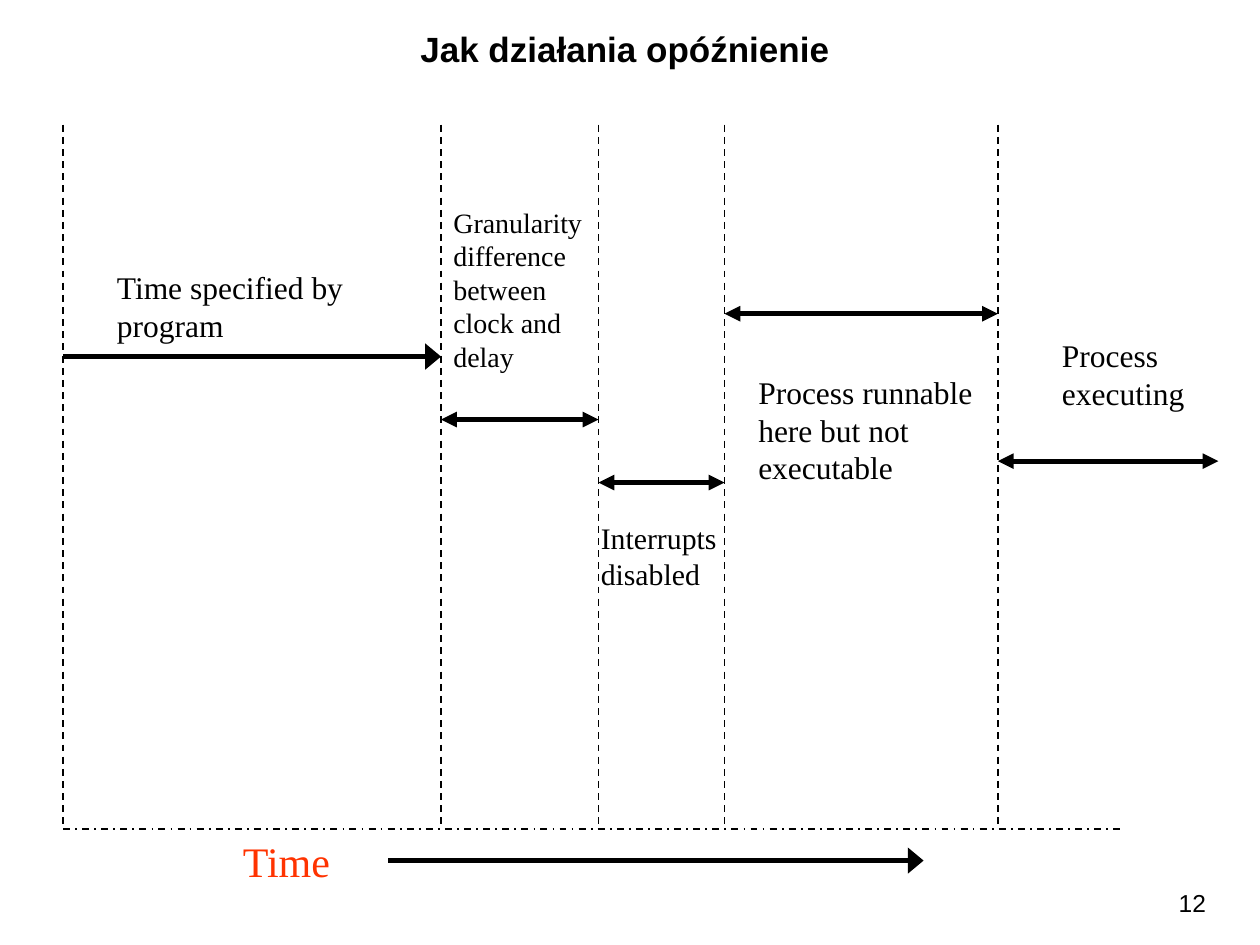
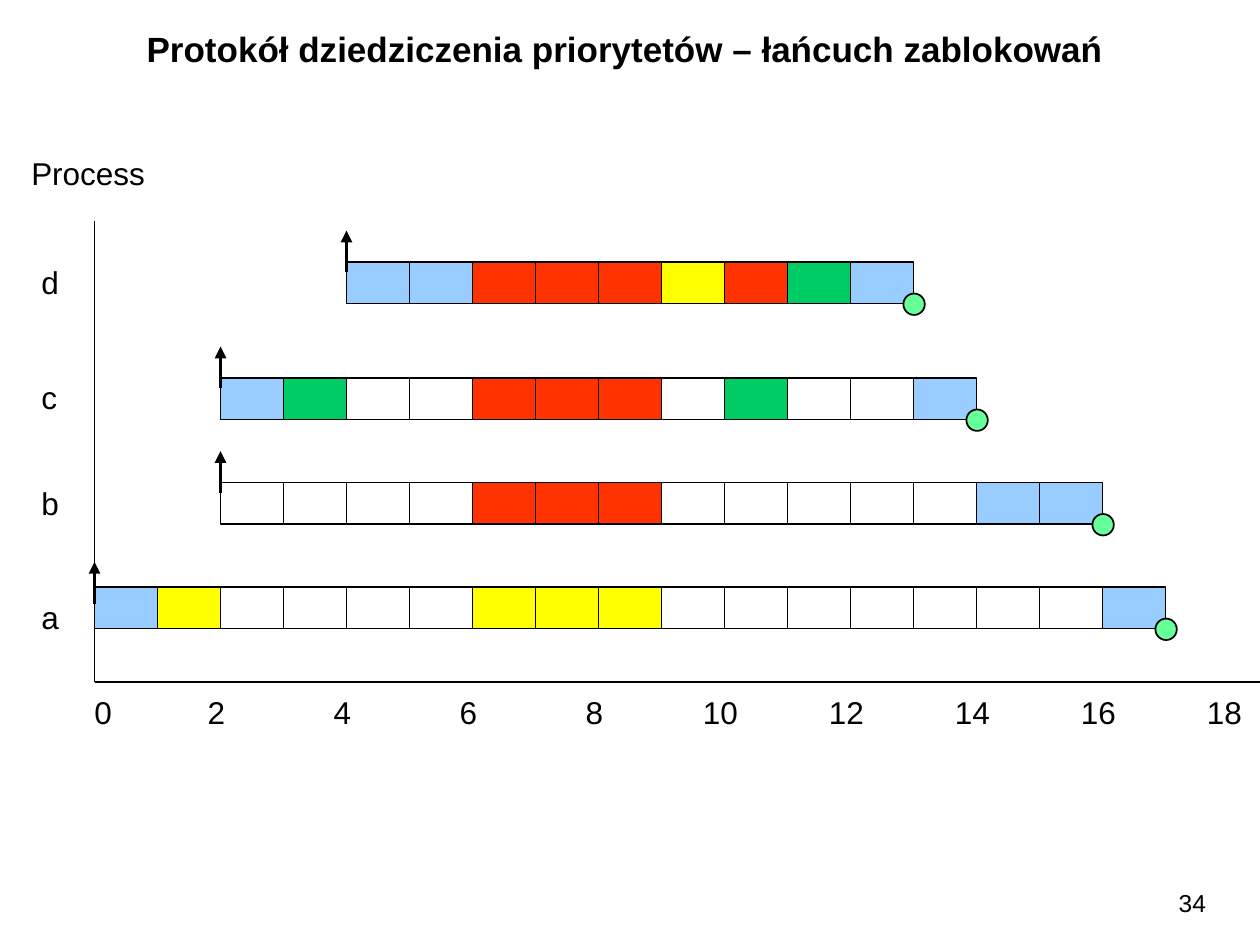
import dataclasses
import pptx
import pptx.dml.color
import pptx.enum.dml
import pptx.enum.shapes
import pptx.enum.text
import pptx.oxml
import pptx.oxml.ns
import pptx.util

PX = 9144
SHAPE = pptx.enum.shapes.MSO_SHAPE
DASH = pptx.enum.dml.MSO_LINE
ALIGN = pptx.enum.text.PP_ALIGN


@dataclasses.dataclass(frozen=True)
class Theme:
    ink: str = "000000"
    red: str = "FF3300"
    blue: str = "99CCFF"
    green: str = "00CC66"
    yellow: str = "FFFF00"
    mint: str = "66FF99"
    sans: str = "Arial"
    serif: str = "Times New Roman"
    page: int = 14
    small: int = 16
    tight: int = 17
    body: int = 18
    title: int = 20
    large: int = 24
    thin: float = 1
    mid: float = 2.25
    thick: float = 3


def emu(*sizes):
    return [pptx.util.Emu(size * PX) for size in sizes]


def tint(code):
    return pptx.dml.color.RGBColor.from_string(code)


class Deck:
    def __init__(self, theme):
        self.theme = theme
        self.show = pptx.Presentation()
        self.show.slide_width, self.show.slide_height = emu(1000, 750)
        self.slide = None

    def start(self, title, page):
        self.slide = self.show.slides.add_slide(self.show.slide_layouts[6])
        theme = self.theme
        self.text(page, 875, 700, 92, 33, size=theme.page, align=ALIGN.RIGHT)
        self.text(title, 25, 17, 942, 43, size=theme.title,
                  align=ALIGN.CENTER, bold=True)

    def text(self, words, left, top, width, height, size=None, face=None,
             color=None, align=ALIGN.LEFT, bold=False, wrap=True):
        box = self.slide.shapes.add_textbox(*emu(left, top, width, height))
        frame = box.text_frame
        frame.word_wrap = wrap
        para = frame.paragraphs[0]
        para.text = words
        para.alignment = align
        font = para.font
        font.name = face or self.theme.sans
        font.size = pptx.util.Pt(size or self.theme.body)
        font.bold = bold
        font.color.rgb = tint(color or self.theme.ink)

    def line(self, x1, y1, x2, y2, weight=None, dash=None, head=None, tail=None):
        link = self.slide.shapes.add_connector(
            pptx.enum.shapes.MSO_CONNECTOR.STRAIGHT, *emu(x1, y1, x2, y2))
        self.trim(link.line, weight or self.theme.thin)
        if dash:
            link.line.dash_style = dash
        props = link._element.spPr
        stroke = props.find(pptx.oxml.ns.qn("a:ln"))
        for end, breadth in (("a:headEnd", head), ("a:tailEnd", tail)):
            if breadth:
                tip = pptx.oxml.ns.qn(end)
                stroke.append(stroke.makeelement(
                    tip, {"type": "triangle", "w": breadth, "len": "med"}))
        props.append(props.makeelement(pptx.oxml.ns.qn("a:effectLst"), {}))

    def shape(self, kind, left, top, width, height, fill=None):
        item = self.slide.shapes.add_shape(kind, *emu(left, top, width, height))
        item.shadow.inherit = False
        if fill:
            item.fill.solid()
            item.fill.fore_color.rgb = tint(fill)
        else:
            item.fill.background()
        self.trim(item.line, self.theme.thin)

    def trim(self, line, weight):
        line.color.rgb = tint(self.theme.ink)
        line.width = pptx.util.Pt(weight)


def draw_delay(deck):
    theme = deck.theme
    deck.start("Jak działania opóźnienie", "12")
    marks = [50, 350, 475, 575, 792]
    floor = 658
    for x in marks:
        deck.line(x, 99, x, floor, dash=DASH.DASH)
    deck.line(marks[0], floor, 892, floor, dash=DASH.DASH_DOT)

    deck.line(marks[0], 283, marks[1], 283, theme.thick, tail="lg")
    ends = marks[1:] + [967]
    for x1, x2, y in zip(ends, ends[1:], [333, 383, 249, 366]):
        deck.line(x1, y, x2, y, theme.thick, head="med", tail="med")

    labels = [
        ("Time specified by program", 83, 208, 250, 70, theme.body),
        ("Granularity difference between clock and delay",
         350, 158, 125, 144, theme.small),
        ("Interrupts disabled", 467, 408, 117, 67, theme.tight),
        ("Process runnable here but not executable",
         592, 291, 200, 100, theme.body),
        ("Process executing", 833, 262, 118, 70, theme.body),
    ]
    for label in labels:
        deck.text(*label, face=theme.serif)
    deck.line(308, 683, 733, 683, theme.thick, tail="lg")
    deck.text("Time", 183, floor, 90, 50, theme.large, theme.serif,
              theme.red, wrap=False)


def draw_chain(deck):
    theme = deck.theme
    deck.start("Protokół dziedziczenia priorytetów – łańcuch zablokowań", "34")
    left, floor, step, high, dot = 75, 541, 50, 33, 17
    deck.line(left, 175, left, floor)
    deck.line(left, floor, 1000, floor)
    deck.text("Process", 15, 117, 110, 40, wrap=False)

    fills = {"b": theme.blue, "r": theme.red, "g": theme.green,
             "y": theme.yellow, "-": None}
    tasks = [
        ("d", 4, "bbrrryrgb", 208, 204, 183),
        ("c", 2, "bg--rrr-g--b", 300, 295, 275),
        ("b", 2, "----rrr-----bb", 383, 379, 358),
        ("a", 0, "by----yyy-------b", 466, 470, 446),
    ]
    for name, begin, cells, top, label, tip in tasks:
        first = left + begin * step
        last = first + len(cells) * step
        deck.text(name, 23, label, 34, 40, wrap=False)
        for i, cell in enumerate(cells):
            deck.shape(SHAPE.RECTANGLE, first + i * step, top, step, high,
                       fills[cell])
        deck.line(first, tip, first, tip + high, theme.mid, head="med")
        deck.shape(SHAPE.OVAL, last - dot // 2, top + 25, dot, dot, theme.mint)

    for tick in range(0, 20, 2):
        width = 34 if tick < 10 else 48
        mid = left + tick * step - 3 if tick else 82
        deck.text(str(tick), mid - width // 2, 545, width, 40, wrap=False)


def main():
    deck = Deck(Theme())
    draw_delay(deck)
    draw_chain(deck)
    deck.show.save("out.pptx")


if __name__ == "__main__":
    main()
